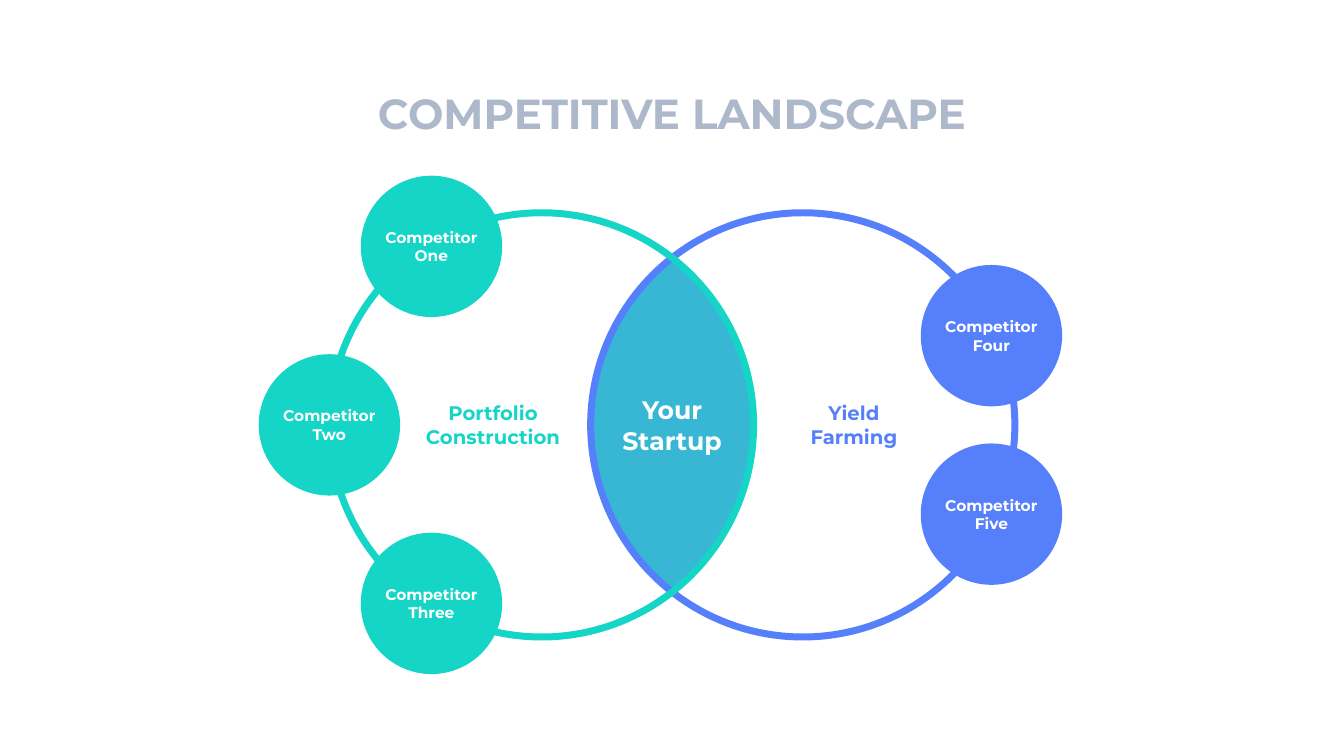
import math

from pptx import Presentation
from pptx.dml.color import RGBColor
from pptx.enum import shapes, text
from pptx.util import Pt

FONT = "Montserrat"
TEAL, BLUE, BLEND, GREY, WHITE = "15D5C6", "567FFB", "37B7D4", "ADB9CA", "FFFFFF"
CENTER_X, CENTER_Y = 480.1, 303.5
RING_RADIUS, RING_OFFSET = 151.5, 93.3
BUBBLE_RADIUS = 50.5
ROW_GAP = 127.5


def color(hex_string):
    return RGBColor.from_string(hex_string)


def write(shape, words, size, hex_string, anchor=text.MSO_ANCHOR.MIDDLE):
    frame = shape.text_frame
    frame.word_wrap = True
    frame.auto_size = text.MSO_AUTO_SIZE.NONE
    frame.vertical_anchor = anchor
    para = frame.paragraphs[0]
    para.alignment = text.PP_ALIGN.CENTER
    span = para.add_run()
    span.text = words
    span.font.name = FONT
    span.font.size = Pt(size)
    span.font.bold = True
    span.font.color.rgb = color(hex_string)


def add_title(page, words):
    title = page.shapes.title
    title.left, title.top = Pt(229.9), Pt(58.3)
    title.width, title.height = Pt(500.4), Pt(43.9)
    write(title, words, 30, GREY)


def add_circle(page, x, y, radius):
    """Add a bare circle around the point x, y."""
    circle = page.shapes.add_shape(
        shapes.MSO_SHAPE.OVAL,
        Pt(x - radius), Pt(y - radius), Pt(2 * radius), Pt(2 * radius))
    circle.shadow.inherit = False
    return circle


def add_ring(page, x, hex_string):
    ring = add_circle(page, x, CENTER_Y, RING_RADIUS)
    ring.fill.background()
    ring.line.color.rgb = color(hex_string)
    ring.line.width = Pt(5)


def add_bubble(page, x, rows_down, words, hex_string):
    """Add a filled circle, placed in rows counted from the middle."""
    bubble = add_circle(page, x, CENTER_Y + rows_down * ROW_GAP, BUBBLE_RADIUS)
    bubble.fill.solid()
    bubble.fill.fore_color.rgb = color(hex_string)
    bubble.line.fill.background()
    bubble.text_frame.margin_left = bubble.text_frame.margin_right = 0
    write(bubble, words, 11, WHITE)


def add_overlap(page, words, steps=48):
    """Fill the lens that the two rings share."""
    half_angle = math.acos(RING_OFFSET / RING_RADIUS)
    points = []
    for side in (1, -1):
        for step in range(steps):
            angle = half_angle * (2 * step / steps - 1)
            x = CENTER_X + side * (RING_RADIUS * math.cos(angle) - RING_OFFSET)
            y = CENTER_Y + side * RING_RADIUS * math.sin(angle)
            points.append((Pt(x), Pt(y)))
    builder = page.shapes.build_freeform(*points[0])
    builder.add_line_segments(points[1:], close=True)
    lens = builder.convert_to_shape()
    lens.shadow.inherit = False
    lens.fill.solid()
    lens.fill.fore_color.rgb = color(BLEND)
    lens.line.fill.background()
    write(lens, words, 18, WHITE)


def add_label(page, x, words, hex_string):
    box = page.shapes.add_textbox(Pt(x), Pt(283), Pt(113), Pt(41))
    write(box, words, 14, hex_string, text.MSO_ANCHOR.TOP)


def main():
    deck = Presentation()
    deck.slide_width, deck.slide_height = Pt(960), Pt(540)
    page = deck.slides.add_slide(deck.slide_layouts[5])

    add_title(page, "COMPETITIVE LANDSCAPE")
    add_overlap(page, "Your Startup")
    add_ring(page, CENTER_X + RING_OFFSET, BLUE)
    add_ring(page, CENTER_X - RING_OFFSET, TEAL)

    for x, rows_down, words, hex_string in (
            (308.2, -1, "Competitor One", TEAL),
            (308.2, 1, "Competitor Three", TEAL),
            (235.3, 0, "Competitor Two", TEAL),
            (708.2, -0.5, "Competitor Four", BLUE),
            (708.2, 0.5, "Competitor Five", BLUE)):
        add_bubble(page, x, rows_down, words, hex_string)

    add_label(page, 553.5, "Yield Farming", BLUE)
    add_label(page, 295.7, "Portfolio Construction", TEAL)
    deck.save("out.pptx")


if __name__ == "__main__":
    main()
